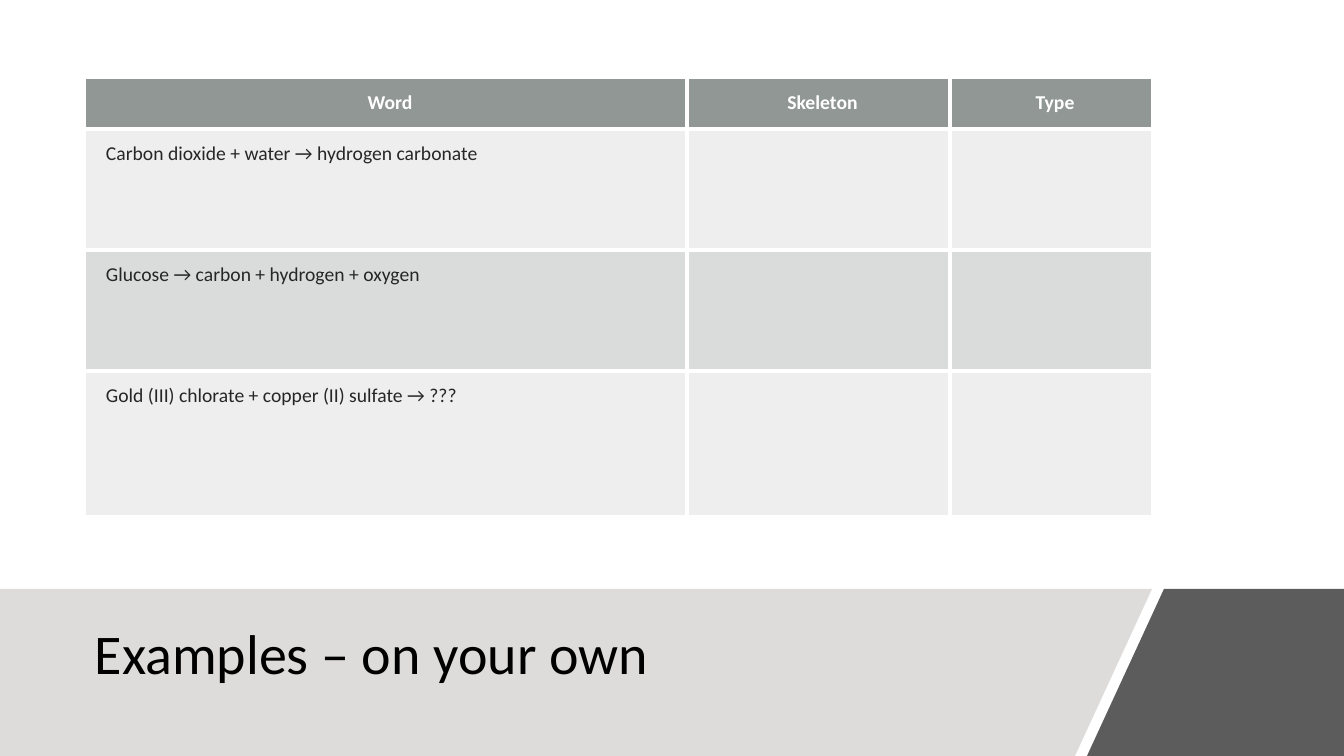
from lxml.etree import SubElement
from pptx import Presentation
from pptx.dml.color import RGBColor
from pptx.enum.text import MSO_ANCHOR as ANCHOR, PP_ALIGN as ALIGN
from pptx.oxml import parse_xml
from pptx.oxml.ns import nsdecls, qn
from pptx.util import Pt

WIDTH, HEIGHT = 1344, 756
SCALE = 12192000 / WIDTH
WHITE, BLACK = RGBColor(0xFF, 0xFF, 0xFF), RGBColor(0, 0, 0)
INK = RGBColor(0x26, 0x26, 0x26)
BAND_GREY, CORNER_GREY = RGBColor(0xDD, 0xDC, 0xDB), RGBColor(0x40, 0x40, 0x40)
HEAD_GREY, ROW_GREY = RGBColor(0x63, 0x6B, 0x68), RGBColor(0x87, 0x8E, 0x8B)
COLUMNS = [602, 263, 202]
ROWS = [51, 121, 121, 145]
TEXTS = [
    ["Word", "Skeleton", "Type"],
    ["Carbon dioxide + water → hydrogen carbonate"],
    ["Glucose → carbon + hydrogen + oxygen"],
    ["Gold (III) chlorate + copper (II) sulfate → ???"],
]


def px(n):
    """Turn pixels into EMU."""
    return round(n * SCALE)


def paint(part, color, opacity=100):
    """Fill a shape or cell with one colour at an opacity in percent."""
    part.fill.solid()
    part.fill.fore_color.rgb = color
    if opacity < 100:
        clr = next(part.fill._xPr.iter(qn("a:srgbClr")))
        SubElement(clr, qn("a:alpha"), val=str(opacity * 1000))


def write(p, text, **font):
    """Add a run of Calibri text with the given font values."""
    r = p.add_run()
    r.text = text
    for name, value in {"name": "Calibri", **font}.items():
        if name == "color":
            r.font.color.rgb = value
        else:
            setattr(r.font, name, value)


def add_polygon(s, points, color, opacity=100):
    """Draw a closed, unlined polygon."""
    start, *rest = [(px(x), px(y)) for x, y in points]
    builder = s.shapes.build_freeform(*start)
    builder.add_line_segments(rest)
    sp = builder.convert_to_shape()
    sp.shadow.inherit = False
    paint(sp, color, opacity)
    sp.line.fill.background()


def add_footer(s, x, y, w, h):
    """Draw the title band and the dark slanted corner."""
    right, bottom, slant = x + w, y + h, 77
    band_end, corner_start = right - 192, right - 180
    add_polygon(s, [(x, y), (band_end, y), (band_end - slant, bottom), (x, bottom)], BAND_GREY)
    add_polygon(s, [(corner_start, y), (right, y), (right, bottom),
                    (corner_start - slant, bottom)], CORNER_GREY, 85)
    tf = s.shapes.add_textbox(px(x + 85), px(y + 11), px(1003), px(92)).text_frame
    tf.word_wrap, tf.vertical_anchor = True, ANCHOR.BOTTOM
    p = tf.paragraphs[0]
    p.line_spacing = 0.9
    write(p, "Examples – on your own", size=Pt(40), color=BLACK)


def add_inner_borders(cell, row, col):
    """Line the cell in white on the sides it shares with other cells."""
    shared = {"lnL": col > 0, "lnR": col < len(COLUMNS) - 1,
              "lnT": row > 0, "lnB": row < len(ROWS) - 1}
    tc_pr = cell._tc.get_or_add_tcPr()
    sides = [side for side, inner in shared.items() if inner]
    for i, side in enumerate(sides):
        tc_pr.insert(i, parse_xml(
            f'<a:{side} {nsdecls("a")} w="{Pt(3)}"><a:solidFill>'
            f'<a:srgbClr val="{WHITE}"/></a:solidFill></a:{side}>'))


def add_reactions(s, x, y, w, h):
    """Place the reaction table."""
    table = s.shapes.add_table(len(ROWS), len(COLUMNS), px(x), px(y), px(w), px(h)).table
    table.first_row = table.horz_banding = False
    for col, width in zip(table.columns, COLUMNS):
        col.width = px(width)
    for i, height in enumerate(ROWS):
        table.rows[i].height = px(height)
        for j in range(len(COLUMNS)):
            cell = table.cell(i, j)
            margins = {"left": 21, "right": 13, "top": 13, "bottom": 13}
            for side, margin in margins.items():
                setattr(cell, f"margin_{side}", px(margin))
            if i == 0:
                paint(cell, HEAD_GREY, 70)
            else:
                paint(cell, ROW_GREY, 15 if i % 2 else 30)
            add_inner_borders(cell, i, j)
            if j < len(TEXTS[i]):
                p = cell.text_frame.paragraphs[0]
                p.alignment = ALIGN.LEFT if i else ALIGN.CENTER
                write(p, TEXTS[i][j], size=Pt(14), bold=i == 0, color=INK if i else WHITE)


def main():
    """Build and save the slide."""
    prs = Presentation()
    prs.slide_width, prs.slide_height = px(WIDTH), px(HEIGHT)
    s = prs.slides.add_slide(prs.slide_layouts[6])
    add_footer(s, 0, 589, WIDTH, HEIGHT - 589)
    add_reactions(s, 85, 78, sum(COLUMNS), sum(ROWS))
    prs.save("out.pptx")


if __name__ == "__main__":
    main()
